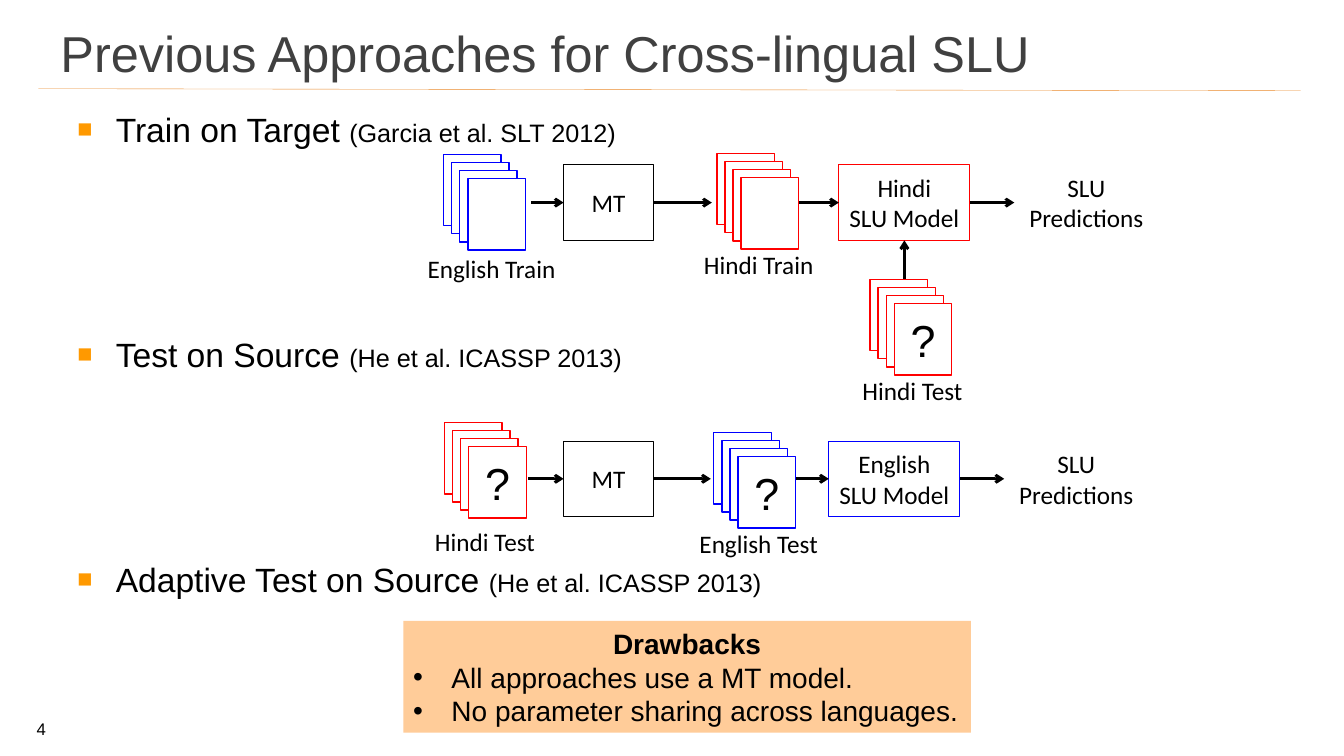
import pptx
import pptx.dml.color
import pptx.enum.shapes
import pptx.enum.text
import pptx.oxml
import pptx.oxml.ns
import pptx.util
from pptx.util import Inches

RGBColor = pptx.dml.color.RGBColor
BLACK = RGBColor(0, 0, 0)
WHITE = RGBColor(255, 255, 255)
GREY = RGBColor(0x40, 0x40, 0x40)
RED = RGBColor(255, 0, 0)
BLUE = RGBColor(0, 0, 255)
ORANGE = RGBColor(0xFF, 0x99, 0)
PEACH = RGBColor(0xFF, 0xCC, 0x99)
RULE = RGBColor(0xEA, 0x8A, 0x2A)

CENTER = pptx.enum.text.PP_ALIGN.CENTER
LEFT = pptx.enum.text.PP_ALIGN.LEFT
MIDDLE = pptx.enum.text.MSO_ANCHOR.MIDDLE
RECTANGLE = pptx.enum.shapes.MSO_SHAPE.RECTANGLE
STRAIGHT = pptx.enum.shapes.MSO_CONNECTOR.STRAIGHT
TOP_SIDE, LEFT_SIDE, BOTTOM_SIDE, RIGHT_SIDE = range(4)

SHEET_WIDTH, SHEET_HEIGHT, SHEET_STEP, SHEET_COUNT = 0.57, 0.71, 0.08, 4


def add_span(para, text, size, font="Arial", color=BLACK, bold=False):
    span = para.add_run()
    span.text = text
    span.font.size = pptx.util.Pt(size)
    span.font.name = font
    span.font.color.rgb = color
    span.font.bold = bold


def add_bullet(para, symbol, color, percent):
    """Give the paragraph a hanging bullet."""
    properties = para._p.get_or_add_pPr()
    properties.set("marL", str(Inches(0.38)))
    properties.set("indent", str(-Inches(0.38)))
    space = pptx.oxml.ns.nsdecls("a")
    for xml in (
        f'<a:buClr {space}><a:srgbClr val="{color}"/></a:buClr>',
        f'<a:buSzPct {space} val="{percent * 1000}"/>',
        f'<a:buFont {space} typeface="Arial"/>',
        f'<a:buChar {space} char="{symbol}"/>',
    ):
        properties.append(pptx.oxml.parse_xml(xml))


def add_centered(frame, lines, size, font):
    """Fill a frame with centred lines and no margins."""
    frame.margin_left = frame.margin_right = 0
    frame.margin_top = frame.margin_bottom = 0
    frame.word_wrap = True
    frame.vertical_anchor = MIDDLE
    for index, line in enumerate(lines):
        para = frame.add_paragraph() if index else frame.paragraphs[0]
        para.alignment = CENTER
        add_span(para, line, size, font)


def add_label(page, left, top, width, height, text, size=18, font="Calibri"):
    box = page.shapes.add_textbox(Inches(left), Inches(top), Inches(width), Inches(height))
    add_centered(box.text_frame, [text], size, font)


def add_rectangle(shapes, left, top, width, height, fill=None, line=None, weight=0.75):
    box = shapes.add_shape(RECTANGLE, Inches(left), Inches(top), Inches(width), Inches(height))
    box.shadow.inherit = False
    if fill is None:
        box.fill.background()
    else:
        box.fill.solid()
        box.fill.fore_color.rgb = fill
    if line is None:
        box.line.fill.background()
    else:
        box.line.color.rgb = line
        box.line.width = pptx.util.Pt(weight)
    return box


def add_step(page, left, top, width, color, lines):
    box = add_rectangle(page.shapes, left, top, width, 0.75, line=color)
    add_centered(box.text_frame, lines, 18, "Calibri")
    return box


def add_stack(page, left, top, color, mark=None):
    """Draw overlapping sheets, with an optional mark on the front one."""
    group = page.shapes.add_group_shape()
    for index in range(SHEET_COUNT):
        shift = index * SHEET_STEP
        sheet = add_rectangle(group.shapes, left + shift, top + shift,
                              SHEET_WIDTH, SHEET_HEIGHT, WHITE, color, 1)
    if mark:
        add_centered(sheet.text_frame, [mark], 32, "Arial")


def add_line(page, start, end, color, weight):
    line = page.shapes.add_connector(STRAIGHT, *(Inches(value) for value in start + end))
    line.line.color.rgb = color
    line.line.width = pptx.util.Pt(weight)
    line._element.spPr.append(pptx.oxml.parse_xml(
        f'<a:effectLst {pptx.oxml.ns.nsdecls("a")}/>'))
    return line


def add_arrow(page, start, end, source=None, target=None):
    """Draw an arrow; source and target are (box, side) joints."""
    arrow = add_line(page, start, end, BLACK, 2)
    if source:
        arrow.begin_connect(*source)
    if target:
        arrow.end_connect(*target)
    arrow.line._get_or_add_ln().append(pptx.oxml.parse_xml(
        f'<a:tailEnd {pptx.oxml.ns.nsdecls("a")} type="arrow"/>'))


def add_pipeline(page, middle, language, color, model_left, stack_edges):
    """Draw MT, model and prediction with the arrows along one row."""
    top = middle - 0.375
    into_mt, into_stack, out_of_stack = stack_edges
    translator = add_step(page, 5.59, top, 0.89, BLACK, ["MT"])
    model = add_step(page, model_left, top, 1.3, color, [language, "SLU Model"])
    prediction_left = model_left + 1.74
    add_label(page, prediction_left, top, 1.43, 0.75, "SLU Predictions")
    add_arrow(page, (into_mt, middle), (5.59, middle), target=(translator, LEFT_SIDE))
    add_arrow(page, (6.48, middle), (into_stack, middle), source=(translator, RIGHT_SIDE))
    add_arrow(page, (out_of_stack, middle), (model_left, middle), target=(model, LEFT_SIDE))
    add_arrow(page, (model_left + 1.3, middle), (prediction_left, middle),
              source=(model, RIGHT_SIDE))
    return model


def add_title(page):
    title = page.shapes.title
    title.left, title.top = Inches(0.5), Inches(0.23)
    title.width, title.height = Inches(10.92), Inches(0.58)
    title.text_frame.vertical_anchor = MIDDLE
    para = title.text_frame.paragraphs[0]
    para.alignment = LEFT
    add_span(para, "Previous Approaches for Cross-lingual SLU", 36, color=GREY)


def add_approaches(page):
    box = page.shapes.add_textbox(Inches(0.67), Inches(1.03), Inches(12), Inches(4.9))
    frame = box.text_frame
    frame.word_wrap = True
    for index, (name, citation) in enumerate((
        ("Train on Target ", "(Garcia et al. SLT 2012)"),
        ("Test on Source ", "(He et al. ICASSP 2013)"),
        ("Adaptive Test on Source ", "(He et al. ICASSP 2013)"),
    )):
        para = frame.add_paragraph() if index else frame.paragraphs[0]
        add_bullet(para, "■", ORANGE, 75)
        if index:
            para.space_before = pptx.util.Pt(132)
        add_span(para, name, 24)
        add_span(para, citation, 18)


def add_drawbacks(page):
    frame = add_rectangle(page.shapes, 4, 6.16, 5.63, 1.11, fill=PEACH).text_frame
    frame.word_wrap = True
    frame.vertical_anchor = MIDDLE
    heading = frame.paragraphs[0]
    heading.alignment = CENTER
    add_span(heading, "Drawbacks", 20, bold=True)
    for text in ("All approaches use a MT model.", "No parameter sharing across languages."):
        para = frame.add_paragraph()
        add_bullet(para, "•", BLACK, 100)
        para.alignment = LEFT
        add_span(para, text, 20)


def main():
    deck = pptx.Presentation()
    deck.slide_width, deck.slide_height = Inches(13.33), Inches(7.5)
    page = deck.slides.add_slide(deck.slide_layouts[5])

    # Heading, list and page number
    add_line(page, (0.38, 0.88), (12.9, 0.9), RULE, 0.25)
    add_title(page)
    add_approaches(page)
    add_label(page, 0.13, 7.1, 0.56, 0.25, "4", 12, "Arial")

    # Train on target
    model = add_pipeline(page, 2.01, "Hindi", RED, 8.32, (5.27, 7.06, 7.83))
    add_arrow(page, (8.97, 2.77), (8.97, 2.38), target=(model, BOTTOM_SIDE))
    add_stack(page, 4.4, 1.53, BLUE)
    add_stack(page, 7.11, 1.52, RED)
    add_stack(page, 8.63, 2.77, RED, "?")
    add_label(page, 4.09, 2.45, 1.57, 0.42, "English Train")
    add_label(page, 6.81, 2.43, 1.43, 0.38, "Hindi Train")
    add_label(page, 8.4, 3.66, 1.3, 0.42, "Hindi Test")

    # Test on source
    add_pipeline(page, 4.75, "English", BLUE, 8.22, (5.24, 7.05, 7.81))
    add_stack(page, 4.41, 4.19, RED, "?")
    add_stack(page, 7.08, 4.29, BLUE, "?")
    add_label(page, 4.16, 5.16, 1.3, 0.42, "Hindi Test")
    add_label(page, 6.81, 5.18, 1.43, 0.42, "English Test")

    add_drawbacks(page)
    deck.save("out.pptx")


if __name__ == "__main__":
    main()
